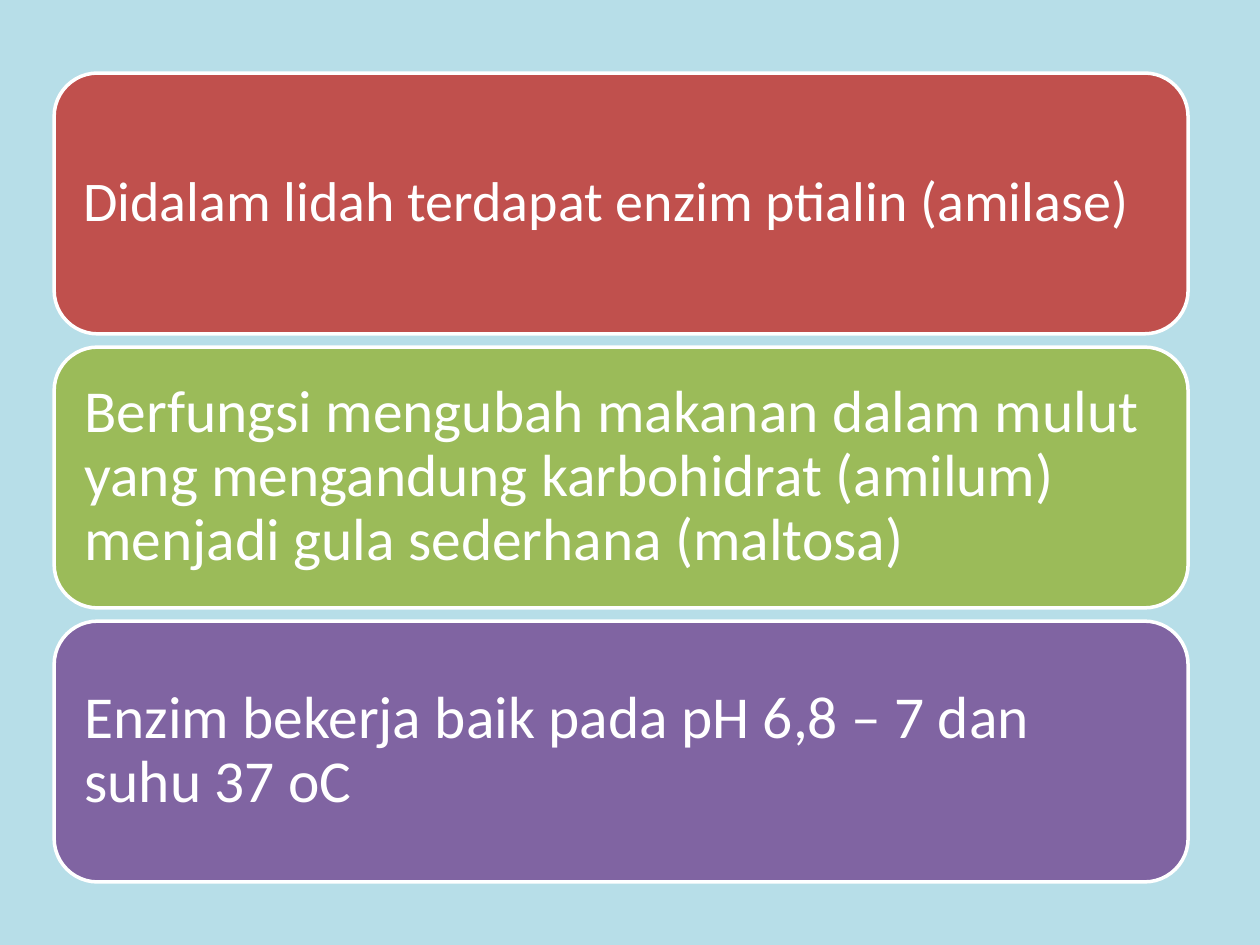
import pptx
import pptx.dml.color
import pptx.enum.shapes
import pptx.enum.text
import pptx.util
from pptx.util import Inches

# Text, fill colour, text size and inner margin of each card
CARDS = [
    ("Didalam lidah terdapat enzim ptialin (amilase)", "C0504D", 32, 0.13),
    ("Berfungsi mengubah makanan dalam mulut yang mengandung karbohidrat "
     "(amilum) menjadi gula sederhana (maltosa)", "9BBB59", 34, 0.14),
    ("Enzim bekerja baik pada pH 6,8 – 7 dan suhu 37 oC", "8064A2", 34, 0.14),
]
CARD_HEIGHT = Inches(2.07)


def color(hex_string):
    return pptx.dml.color.RGBColor.from_string(hex_string)


def add_card(page, box, text, fill, size, margin):
    """Place one rounded card with its text in box (left, top, width, height)."""
    card = page.shapes.add_shape(
        pptx.enum.shapes.MSO_SHAPE.ROUNDED_RECTANGLE, *box)
    card.shadow.inherit = False
    card.fill.solid()
    card.fill.fore_color.rgb = color(fill)
    card.line.color.rgb = color("FFFFFF")
    card.line.width = pptx.util.Pt(2)

    # Text, set in from the rounded corners
    frame = card.text_frame
    frame.word_wrap = True
    frame.vertical_anchor = pptx.enum.text.MSO_ANCHOR.MIDDLE
    frame.margin_left = frame.margin_right = Inches(margin)
    frame.margin_top = frame.margin_bottom = Inches(margin)
    para = frame.paragraphs[0]
    para.text = text
    para.alignment = pptx.enum.text.PP_ALIGN.LEFT
    para.line_spacing = 0.9
    para.font.name = "Calibri"
    para.font.size = pptx.util.Pt(size)
    para.font.color.rgb = color("FFFFFF")


def add_card_list(page, box):
    """Stack the cards in box, with equal gaps between them."""
    left, top, width, height = box
    step = (height - CARD_HEIGHT) // (len(CARDS) - 1)
    for index, card in enumerate(CARDS):
        add_card(page, (left, top + index * step, width, CARD_HEIGHT), *card)


def main():
    deck = pptx.Presentation()
    deck.slide_width, deck.slide_height = Inches(10), Inches(7.5)
    page = deck.slides.add_slide(deck.slide_layouts[6])

    # Background
    page.background.fill.solid()
    page.background.fill.fore_color.rgb = color("B7DEE8")

    # Enzyme facts
    add_card_list(page, (Inches(0.43), Inches(0.58), Inches(9), Inches(6.42)))
    deck.save("out.pptx")


if __name__ == "__main__":
    main()
